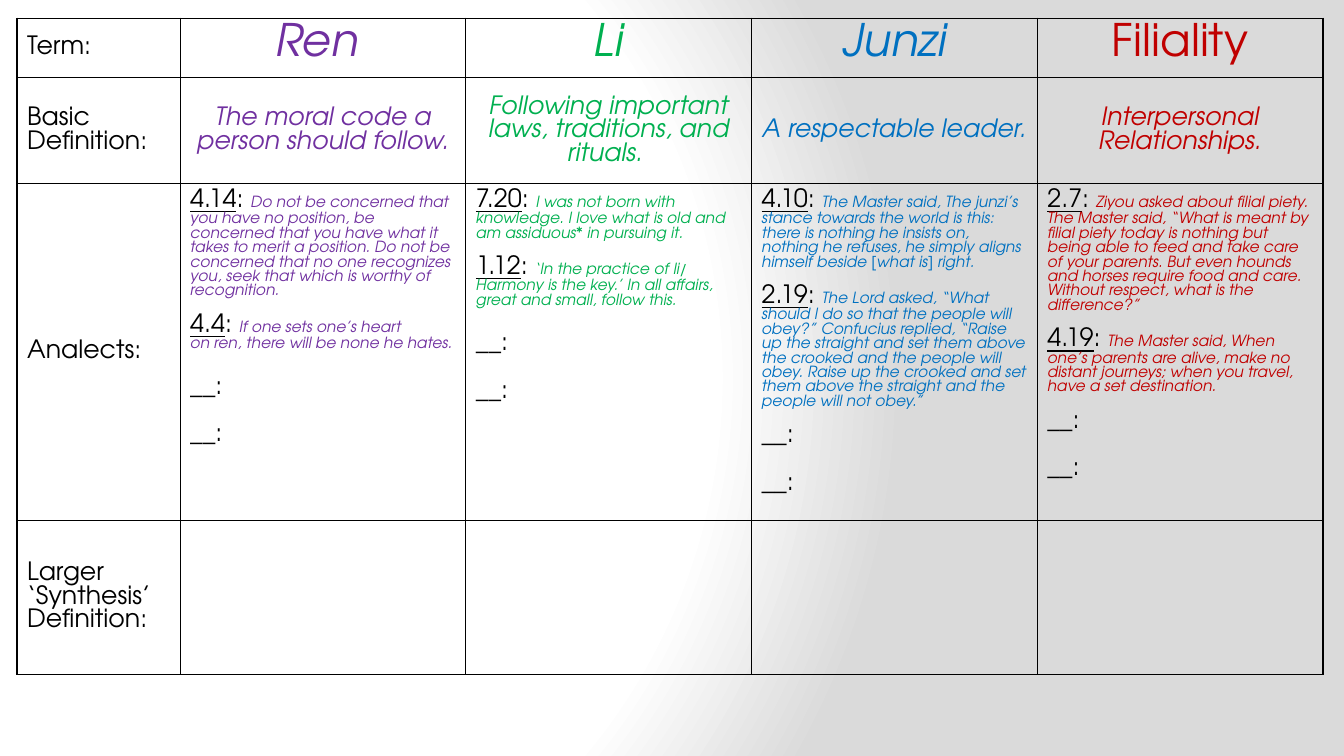
from dataclasses import dataclass

from lxml import etree
from pptx import Presentation
from pptx.dml.color import RGBColor
from pptx.enum.text import MSO_ANCHOR, PP_ALIGN
from pptx.oxml.ns import qn
from pptx.util import Cm, Pt

CENTER, LEFT = PP_ALIGN.CENTER, PP_ALIGN.LEFT
TOP, MIDDLE = MSO_ANCHOR.TOP, MSO_ANCHOR.MIDDLE

FONT = "TeX Gyre Adventor"
COLORS = {
    "black": "000000", "white": "FFFFFF", "grey": "DADADA",
    "purple": "7030A0", "green": "00B050", "blue": "0070C0", "red": "C00000",
}
TERM_SIZE, BODY_SIZE, QUOTE_SIZE = Pt(32), Pt(18), Pt(11)
QUOTE_GAP, BLANK_GAP = Pt(10.5), Pt(17)
COLUMN_WIDTHS = [Cm(4.11)] + [Cm(7.2)] * 4
ROW_HEIGHTS = [Cm(1.5), Cm(2.67), Cm(8.48), Cm(3.89)]
ROW_LABELS = ["Term:", "Basic Definition:", "Analects:", "Larger ‘Synthesis’ Definition:"]
BACKGROUND_STOPS = [(0, "white"), (75, "white"), (100, "grey")]
BACKGROUND_FOCUS = {"l": 20, "t": 50, "r": 100, "b": 50}


@dataclass
class Passage:
    number: str
    quote: str
    continuation: str = ""


@dataclass
class Concept:
    term: str
    definition: str
    color: str
    passages: list[Passage]
    first_blank_gap: Pt = QUOTE_GAP
    term_italic: bool = True


CONCEPTS = [
    Concept("Ren ", "The moral code a person should follow.", "purple", [
        Passage("4.14", "Do not be concerned that you have no position, be concerned that you "
                "have what it takes to merit a position. Do not be concerned that no one "
                "recognizes you, seek that which is worthy of recognition."),
        Passage("4.4", "If one sets one’s heart", "on ren, there will be none he hates."),
    ], BLANK_GAP),
    Concept("Li", "Following important laws, traditions, and rituals. ", "green", [
        Passage("7.20", "I was not born with knowledge. I love what is old and am assiduous* "
                "in pursuing it."),
        Passage("1.12", "‘In the practice of li/ Harmony is the key.’ In all affairs, great "
                "and small, follow this."),
    ], BLANK_GAP),
    Concept("Junzi", "A respectable leader.", "blue", [
        Passage("4.10", "The Master said, The junzi’s stance towards the world is this: there "
                "is nothing he insists on, nothing he refuses, he simply aligns himself "
                "beside [what is] right."),
        Passage("2.19", "The Lord asked, “What should I do so that the people will obey?” "
                "Confucius replied, “Raise up the straight and set them above the crooked and "
                "the people will obey. Raise up the crooked and set them above the straight "
                "and the people will not obey.”"),
    ]),
    Concept("Filiality", "Interpersonal Relationships.", "red", [
        Passage("2.7", "Ziyou asked about filial piety. The Master said, “What is meant by "
                "filial piety today is nothing but being able to feed and take care of your "
                "parents. But even hounds and horses require food and care. Without respect, "
                "what is the difference?”"),
        Passage("4.19", "The Master said, When one’s parents are alive, make no distant "
                "journeys; when you travel, have a set destination."),
    ], term_italic=False),
]


def paint_background(slide) -> None:
    """Fill the slide with a radial gradient centred on BACKGROUND_FOCUS."""
    slide.background.fill.gradient()
    gradient = slide.element.find(".//" + qn("a:gradFill"))
    for child in list(gradient):
        gradient.remove(child)
    stops = etree.SubElement(gradient, qn("a:gsLst"))
    for position, color in BACKGROUND_STOPS:
        stop = etree.SubElement(stops, qn("a:gs"), pos=str(position * 1000))
        etree.SubElement(stop, qn("a:srgbClr"), val=COLORS[color])
    circle = etree.SubElement(gradient, qn("a:path"), {"path": "circle"})
    focus = {side: str(percent * 1000) for side, percent in BACKGROUND_FOCUS.items()}
    etree.SubElement(circle, qn("a:fillToRect"), focus)


def style_cell(cell) -> None:
    """Give the cell thin black borders and no fill."""
    properties = cell._tc.get_or_add_tcPr()
    for side in ("a:lnL", "a:lnR", "a:lnT", "a:lnB"):
        line = etree.SubElement(properties, qn(side), w=str(Pt(1)))
        fill = etree.SubElement(line, qn("a:solidFill"))
        etree.SubElement(fill, qn("a:srgbClr"), val=COLORS["black"])
    cell.fill.background()


def add_run(paragraph, text: str, color: str = "black", **formats) -> None:
    run = paragraph.add_run()
    run.text = text
    run.font.color.rgb = RGBColor.from_string(COLORS[color])
    for name, value in ({"name": FONT, "size": BODY_SIZE} | formats).items():
        setattr(run.font, name, value)


def write_cell(cell, text: str, color: str = "black", alignment=LEFT, anchor=MIDDLE,
               **formats) -> None:
    cell.vertical_anchor = anchor
    paragraph = cell.text_frame.paragraphs[0]
    paragraph.alignment = alignment
    add_run(paragraph, text, color, **formats)


def write_analects(cell, concept: Concept) -> None:
    """Write the numbered passages, then two blanks to be filled in."""
    frame = cell.text_frame
    quote_format = {"color": concept.color, "size": QUOTE_SIZE, "italic": True}
    for index, passage in enumerate(concept.passages):
        paragraph = frame.add_paragraph() if index else frame.paragraphs[0]
        paragraph.space_before = QUOTE_GAP if index else Pt(0)
        add_run(paragraph, passage.number, underline=True)
        add_run(paragraph, ": ")
        add_run(paragraph, passage.quote, **quote_format)
        if passage.continuation:
            add_run(frame.add_paragraph(), passage.continuation, **quote_format)
    for gap in (concept.first_blank_gap, BLANK_GAP):
        paragraph = frame.add_paragraph()
        paragraph.space_before = gap
        add_run(paragraph, "__:")


def add_concept_table(slide) -> None:
    table = slide.shapes.add_table(
        len(ROW_HEIGHTS), len(COLUMN_WIDTHS), Cm(0.43), Cm(0.46),
        sum(COLUMN_WIDTHS), sum(ROW_HEIGHTS)).table
    table.first_row = table.horz_banding = False
    for column, width in zip(table.columns, COLUMN_WIDTHS):
        column.width = width
    for row, height in zip(table.rows, ROW_HEIGHTS):
        row.height = height
    for cell in table.iter_cells():
        style_cell(cell)
    for row_index, label in enumerate(ROW_LABELS):
        write_cell(table.cell(row_index, 0), label)
    for column_index, concept in enumerate(CONCEPTS, start=1):
        write_cell(table.cell(0, column_index), concept.term, concept.color, CENTER, TOP,
                   size=TERM_SIZE, italic=concept.term_italic)
        write_cell(table.cell(1, column_index), concept.definition, concept.color, CENTER,
                   italic=True)
        write_analects(table.cell(2, column_index), concept)


def main() -> None:
    presentation = Presentation()
    presentation.slide_width, presentation.slide_height = Cm(33.87), Cm(19.05)
    slide = presentation.slides.add_slide(presentation.slide_layouts[6])
    paint_background(slide)
    add_concept_table(slide)
    presentation.save("out.pptx")


if __name__ == "__main__":
    main()
